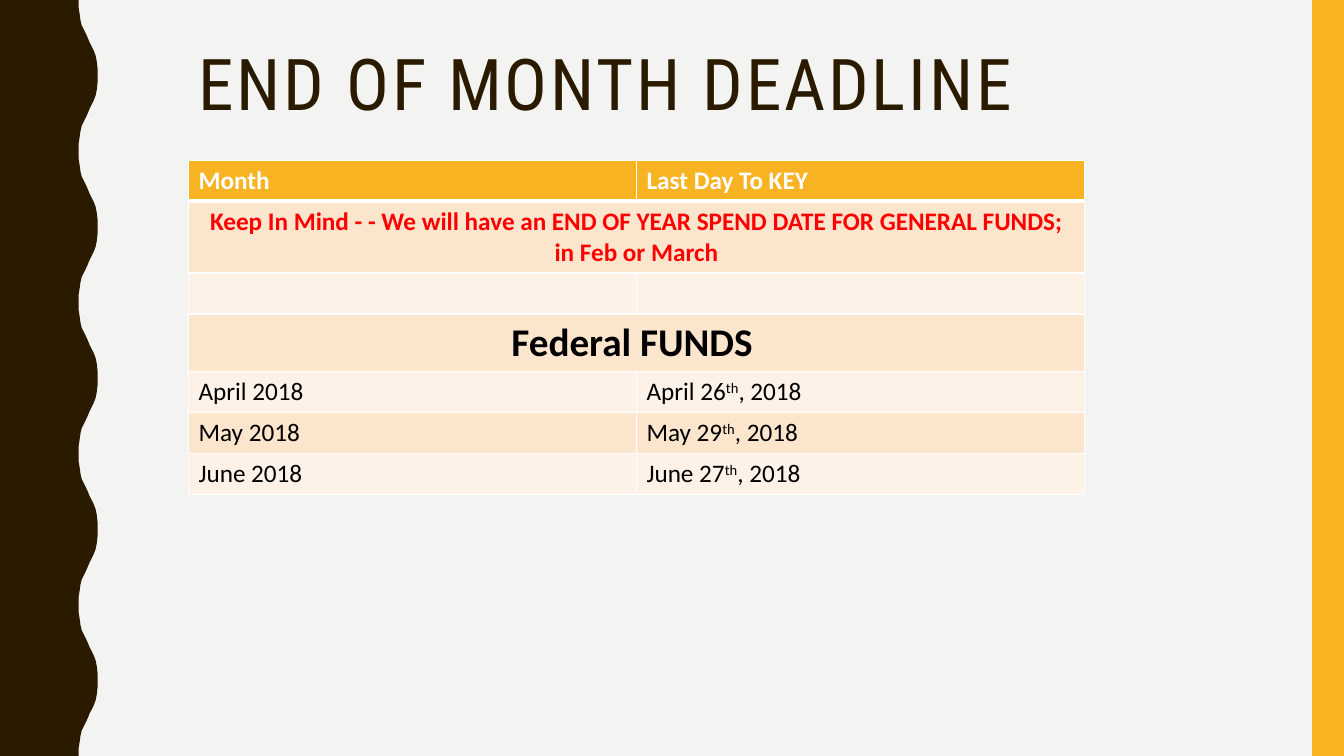
from lxml.etree import SubElement
from pptx import Presentation
from pptx.dml.color import RGBColor
from pptx.enum.shapes import MSO_SHAPE
from pptx.enum.text import MSO_ANCHOR, PP_ALIGN
from pptx.oxml.ns import qn
from pptx.util import Cm, Pt

COLORS = {
    "background": "F3F3F2",
    "brown": "2A1A00",
    "gold": "F8B323",
    "white": "FFFFFF",
    "red": "FF0000",
    "black": "000000",
    "band": "FCE5CD",
    "light band": "FEF2E8",
}
SLIDE_WIDTH, SLIDE_HEIGHT = 33.87, 19.05

# One half of a wave, from trough to crest: (across, down) in cm
HALF_WAVE = [
    (1.98, 0), (1.98, 0.18), (2.01, 0.36), (2.03, 0.51), (2.06, 0.64),
    (2.11, 0.74), (2.16, 0.84), (2.21, 0.95), (2.26, 1.07), (2.31, 1.17),
    (2.36, 1.27), (2.41, 1.4), (2.44, 1.55), (2.46, 1.73), (2.46, 1.9),
]
WAVE_COUNT = 5
WAVE_HEIGHT = SLIDE_HEIGHT / WAVE_COUNT

DEADLINES = [
    ("April 2018", "April 26", ", 2018"),
    ("May 2018", "May 29", ", 2018"),
    ("June 2018", "June 27", ", 2018"),
]
ROW_HEIGHTS = [1.03, 1.81, 1.03, 1.46, 1.03, 1.03, 1.03]


def rgb(color):
    return RGBColor.from_string(COLORS[color])


def paint(shape, color):
    shape.fill.solid()
    shape.fill.fore_color.rgb = rgb(color)
    shape.line.fill.background()
    shape.shadow.inherit = False


def style(paragraph, font_name, size, color, bold=False, align=PP_ALIGN.LEFT):
    paragraph.alignment = align
    font = paragraph.font
    font.name = font_name
    font.size = Pt(size)
    font.bold = bold
    font.color.rgb = rgb(color)


def add_wavy_edge(slide):
    mirrored = [(x, WAVE_HEIGHT - y) for x, y in reversed(HALF_WAVE[1:-1])]
    outline = [
        (Cm(x), Cm(y + wave * WAVE_HEIGHT))
        for wave in range(WAVE_COUNT)
        for x, y in HALF_WAVE + mirrored
    ]
    outline += [(Cm(HALF_WAVE[0][0]), Cm(SLIDE_HEIGHT)), (0, Cm(SLIDE_HEIGHT))]
    builder = slide.shapes.build_freeform(0, 0)
    builder.add_line_segments(outline, close=True)
    paint(builder.convert_to_shape(), "brown")


def add_side_bar(slide):
    bar = slide.shapes.add_shape(
        MSO_SHAPE.RECTANGLE, Cm(33.07), 0, Cm(0.8), Cm(SLIDE_HEIGHT))
    paint(bar, "gold")


def add_title(slide, text):
    title = slide.shapes.add_textbox(Cm(3.48), Cm(1.07), Cm(25.93), Cm(2.46))
    frame = title.text_frame
    frame.word_wrap = True
    frame.vertical_anchor = MSO_ANCHOR.MIDDLE
    frame.margin_right = Cm(2.6)
    frame.margin_bottom = Cm(0.3)
    paragraph = frame.paragraphs[0]
    paragraph.line_spacing = 0.9
    run = paragraph.add_run()
    run.text = text
    style(paragraph, "Roboto Condensed", 51, "brown", align=PP_ALIGN.CENTER)
    run.font._element.set("spc", "200")


def set_cell(cell, fill, top=1, bottom=1):
    """Fill the cell and draw its white borders, with widths in points."""
    properties = cell._tc.get_or_add_tcPr()
    for side, width in (("L", 1), ("R", 1), ("T", top), ("B", bottom)):
        border = SubElement(properties, qn(f"a:ln{side}"), w=str(Pt(width)))
        solid = SubElement(border, qn("a:solidFill"))
        SubElement(solid, qn("a:srgbClr"), val=COLORS["white"])
    cell.fill.solid()
    cell.fill.fore_color.rgb = rgb(fill)


def write_cell(cell, text, size=18, color="black", **options):
    paragraph = cell.text_frame.paragraphs[0]
    paragraph.add_run().text = text
    style(paragraph, "Calibri", size, color, **options)
    return paragraph


def add_deadline_table(slide):
    table = slide.shapes.add_table(
        len(ROW_HEIGHTS), 2, Cm(4.75), Cm(4.04), Cm(22.58),
        Cm(sum(ROW_HEIGHTS))).table
    for row, height in enumerate(ROW_HEIGHTS):
        table.rows[row].height = Cm(height)
        fill = "gold" if row == 0 else "band" if row % 2 else "light band"
        for column in range(2):
            set_cell(table.cell(row, column), fill,
                     top=3 if row == 1 else 1, bottom=3 if row == 0 else 1)
    for row in (1, 3):
        table.cell(row, 0).merge(table.cell(row, 1))

    for column, heading in enumerate(("Month", "Last Day To KEY")):
        write_cell(table.cell(0, column), heading, color="white", bold=True)
    write_cell(
        table.cell(1, 0),
        "Keep In Mind - - We will have an END OF YEAR SPEND DATE FOR "
        "GENERAL FUNDS; in Feb or March",
        color="red", bold=True, align=PP_ALIGN.CENTER)
    write_cell(table.cell(3, 0), "Federal FUNDS ", size=28, bold=True,
               align=PP_ALIGN.CENTER)
    for row, (month, day, year) in enumerate(DEADLINES, start=4):
        write_cell(table.cell(row, 0), month)
        last_day = write_cell(table.cell(row, 1), day)
        ordinal = last_day.add_run()
        ordinal.text = "th"
        ordinal.font._element.set("baseline", "30000")
        last_day.add_run().text = year


def main():
    presentation = Presentation()
    presentation.slide_width = Cm(SLIDE_WIDTH)
    presentation.slide_height = Cm(SLIDE_HEIGHT)
    slide = presentation.slides.add_slide(presentation.slide_layouts[6])
    slide.background.fill.solid()
    slide.background.fill.fore_color.rgb = rgb("background")
    add_wavy_edge(slide)
    add_side_bar(slide)
    add_title(slide, "END OF MONTH DEADLINE")
    add_deadline_table(slide)
    presentation.save("out.pptx")


if __name__ == "__main__":
    main()
